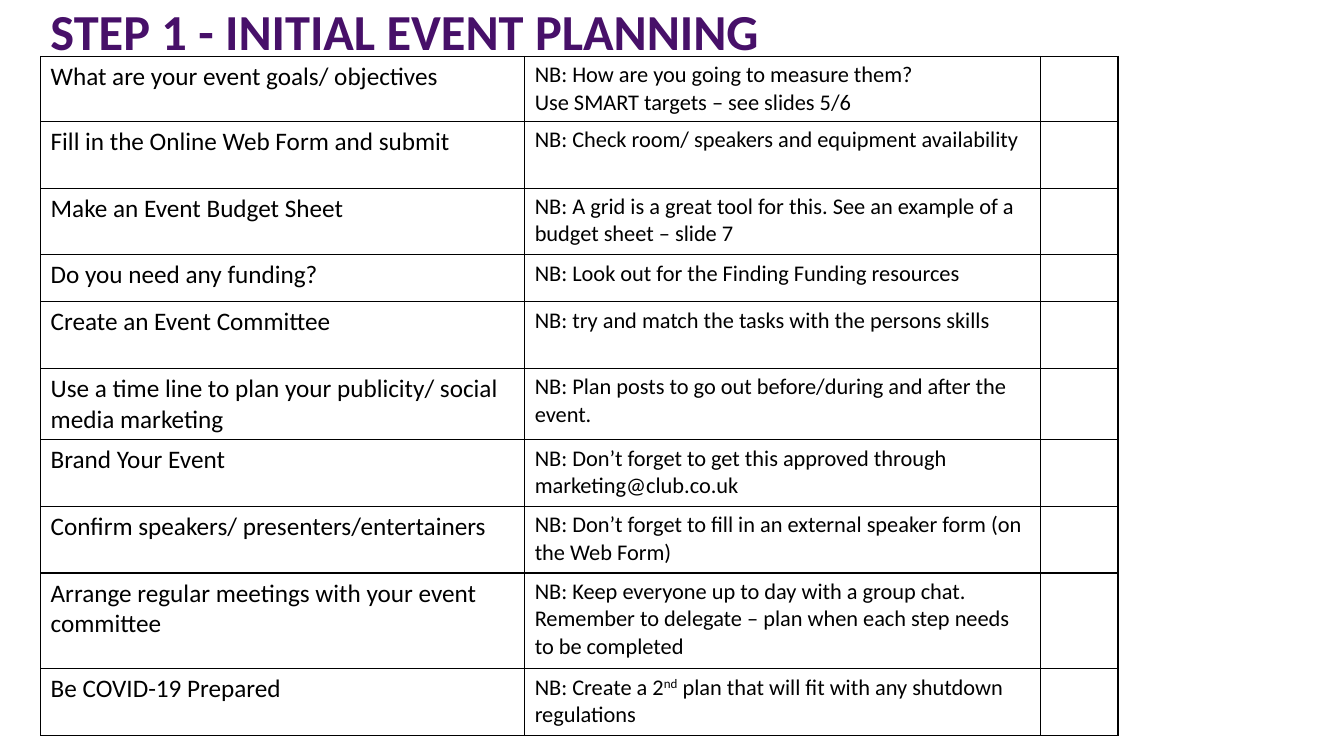
from lxml import etree
from pptx import Presentation
from pptx.dml.color import RGBColor
from pptx.enum.text import MSO_ANCHOR
from pptx.oxml.ns import qn
from pptx.util import Pt

MIDDLE = MSO_ANCHOR.MIDDLE

HEADING = "STEP 1 - INITIAL EVENT PLANNING"
# Each step: task, note paragraphs (each a list of runs), row height
STEPS = [
    ("What are your event goals/ objectives",
     [["NB: How are you going to measure them?"],
      ["Use SMART targets – see slides 5/6"]], 46.5),
    ("Fill in the Online Web Form and submit",
     [["NB: Check room/ speakers and equipment availability"]], 47.6),
    ("Make an Event Budget Sheet",
     [["NB: A grid is a great tool for this. See an example of a budget sheet – slide 7"]], 47.6),
    ("Do you need any funding?",
     [["NB: Look out for the Finding Funding resources"]], 33.6),
    ("Create an Event Committee",
     [["NB: try and match the tasks with the persons skills"]], 47.6),
    ("Use a time line to plan your publicity/ social media marketing",
     [["NB: Plan posts to go out before/during and after the event."]], 51),
    ("Brand Your Event",
     [["NB: Don’t forget to get this approved through marketing@club.co.uk"]], 47.6),
    ("Confirm speakers/ presenters/entertainers",
     [["NB: Don’t forget to fill in an external speaker form (on the Web Form)"]], 47.6),
    ("Arrange regular meetings with your event committee",
     [["NB: Keep everyone up to day with a group chat. Remember to delegate – "
       "plan when each step needs to be completed"]], 68.4),
    ("Be COVID-19 Prepared",
     [["NB: Create a 2", "nd", " plan that will fit with any shutdown regulations"]], 47.6),
]
SUPERSCRIPTS = {"nd"}
COLUMN_WIDTHS = [345.8, 368.2, 55.6]
LEFT, TABLE_TOP = 29, 40.3

THEME = {
    "font": "Calibri",
    "heading": RGBColor(0x47, 0x10, 0x69),
    "text": RGBColor(0, 0, 0),
    "border": "000000",
    "border_width": Pt(1),
    "heading_size": Pt(36),
    "task_size": Pt(18),
    "note_size": Pt(16),
}


def add_run(paragraph, text, size, color, bold=False):
    run = paragraph.add_run()
    run.text = text
    run.font.name = THEME["font"]
    run.font.size = size
    run.font.bold = bold
    run.font.color.rgb = color
    if text in SUPERSCRIPTS:
        run.font._element.set("baseline", "30000")


def fill_cell(cell, paragraphs, size):
    for index, runs in enumerate(paragraphs):
        frame = cell.text_frame
        paragraph = frame.add_paragraph() if index else frame.paragraphs[0]
        for text in runs:
            add_run(paragraph, text, size, THEME["text"])


def outline_cell(cell):
    properties = cell._tc.get_or_add_tcPr()
    for side in ("a:lnL", "a:lnR", "a:lnT", "a:lnB"):
        line = etree.SubElement(properties, qn(side), w=str(THEME["border_width"]))
        solid = etree.SubElement(line, qn("a:solidFill"))
        etree.SubElement(solid, qn("a:srgbClr"), val=THEME["border"])
    cell.fill.background()


def add_heading(slide):
    frame = slide.shapes.add_textbox(Pt(LEFT), Pt(-23), Pt(864), Pt(90)).text_frame
    frame.word_wrap = True
    frame.vertical_anchor = MIDDLE
    add_run(frame.paragraphs[0], HEADING, THEME["heading_size"], THEME["heading"], True)


def add_checklist(slide):
    heights = [height for _, _, height in STEPS]
    table = slide.shapes.add_table(
        len(STEPS), len(COLUMN_WIDTHS), Pt(LEFT), Pt(TABLE_TOP),
        Pt(sum(COLUMN_WIDTHS)), Pt(sum(heights))).table
    table.first_row = False
    table.horz_banding = False
    for column, width in zip(table.columns, COLUMN_WIDTHS):
        column.width = Pt(width)
    for row, (task, notes, height) in zip(table.rows, STEPS):
        row.height = Pt(height)
        fill_cell(row.cells[0], [[task]], THEME["task_size"])
        fill_cell(row.cells[1], notes, THEME["note_size"])
        for cell in row.cells:
            outline_cell(cell)


def main():
    deck = Presentation()
    deck.slide_width, deck.slide_height = Pt(960), Pt(540)
    slide = deck.slides.add_slide(deck.slide_layouts[6])
    add_heading(slide)
    add_checklist(slide)
    deck.save("out.pptx")


if __name__ == "__main__":
    main()
